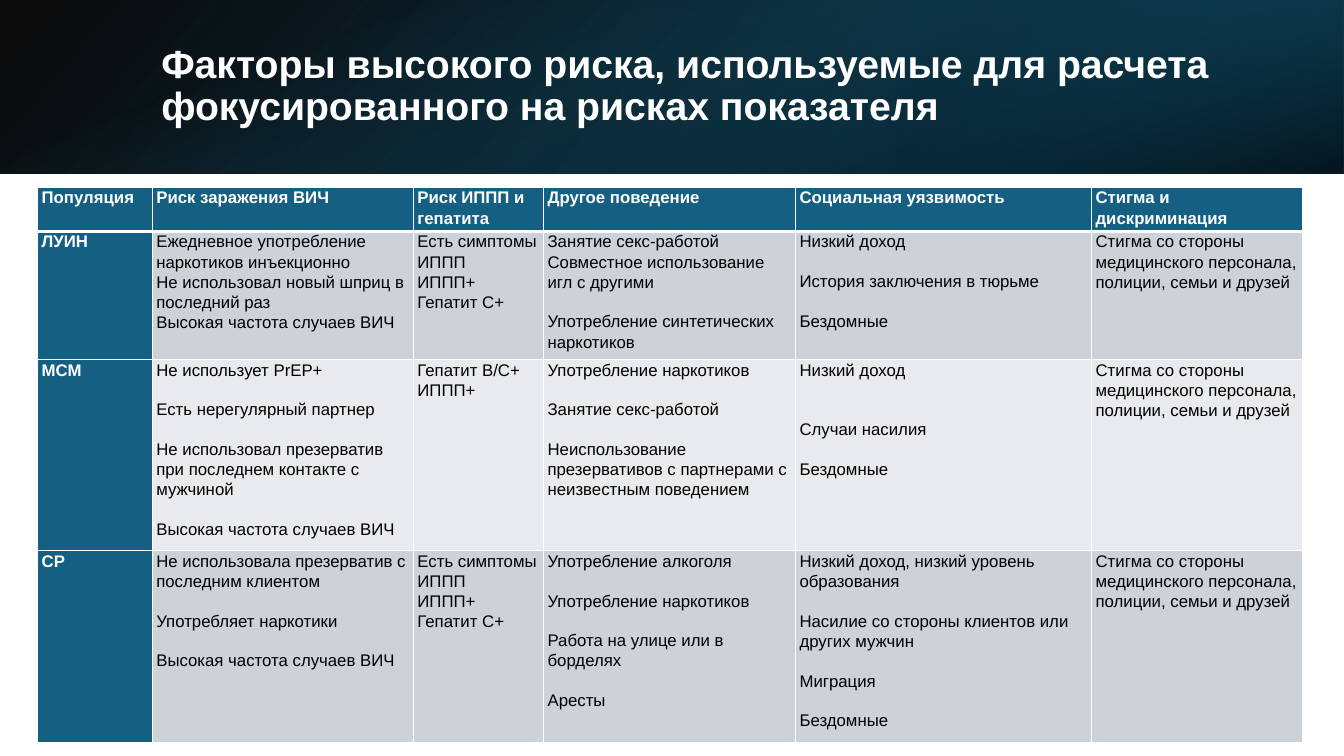
from lxml.etree import SubElement
from pptx import Presentation
from pptx.dml.color import RGBColor
from pptx.enum.shapes import MSO_SHAPE
from pptx.enum.text import MSO_ANCHOR, MSO_AUTO_SIZE, PP_ALIGN
from pptx.oxml.ns import qn
from pptx.util import Cm, Pt

WHITE = RGBColor(0xFF, 0xFF, 0xFF)
BLACK = RGBColor(0x00, 0x00, 0x00)
BLUE = RGBColor(0x15, 0x60, 0x82)
DEEP_BLUE = RGBColor(0x10, 0x48, 0x62)
NIGHT_BLUE = RGBColor(0x0B, 0x30, 0x41)
GREY = RGBColor(0xCC, 0xD2, 0xD8)
LIGHT_GREY = RGBColor(0xE8, 0xEA, 0xED)

SLIDE_WIDTH, SLIDE_HEIGHT = 33.87, 19.05
BAND_HEIGHT = 4.37
COLUMN_WIDTHS = (2.89, 6.58, 3.28, 6.35, 7.46, 5.32)
ROW_HEIGHTS = (1.11, 3.23, 4.82, 4.82)
BLANK_LINE = 14

STIGMA = "Стигма со стороны медицинского персонала, полиции, семьи и друзей"
INFECTIONS = "Есть симптомы ИППП\nИППП+\nГепатит C+"

# Each empty line in a cell becomes spacing above the next paragraph
RISK_FACTORS = (
    ("Популяция", "Риск заражения ВИЧ", "Риск ИППП и гепатита", "Другое поведение",
     "Социальная уязвимость", "Стигма и дискриминация"),
    ("ЛУИН",
     "Ежедневное употребление наркотиков инъекционно\n"
     "Не использовал новый шприц в последний раз\nВысокая частота случаев ВИЧ",
     INFECTIONS,
     "Занятие секс-работой\nСовместное использование игл с другими\n\n"
     "Употребление синтетических наркотиков",
     "Низкий доход\n\nИстория заключения в тюрьме\n\nБездомные",
     STIGMA),
    ("МСМ",
     "Не использует PrEP+\n\nЕсть нерегулярный партнер\n\n"
     "Не использовал презерватив при последнем контакте с мужчиной\n\n"
     "Высокая частота случаев ВИЧ",
     "Гепатит B/C+\nИППП+",
     "Употребление наркотиков\n\nЗанятие секс-работой\n\n"
     "Неиспользование презервативов с партнерами с неизвестным поведением",
     "Низкий доход\n\n\nСлучаи насилия\n\nБездомные",
     STIGMA),
    ("СР",
     "Не использовала презерватив с последним клиентом\n\n"
     "Употребляет наркотики\n\nВысокая частота случаев ВИЧ",
     INFECTIONS,
     "Употребление алкоголя\n\nУпотребление наркотиков\n\n"
     "Работа на улице или в борделях\n\nАресты",
     "Низкий доход, низкий уровень образования\n\n"
     "Насилие со стороны клиентов или других мужчин\n\nМиграция\n\nБездомные",
     STIGMA),
)


class SlideBuilder:
    font_name = "Arial"

    def __init__(self, slide):
        self.slide = slide

    def style(self, paragraph, size, color, bold, spacing):
        paragraph.line_spacing = spacing
        font = paragraph.font
        font.name, font.size, font.bold = self.font_name, Pt(size), bold
        font.color.rgb = color

    def gradient_band(self, left, top, width, height, stops, angle, rotation=0, flip=False):
        shape = self.slide.shapes.add_shape(
            MSO_SHAPE.RECTANGLE, Cm(left), Cm(top), Cm(width), Cm(height))
        shape.shadow.inherit = False
        shape.line.fill.background()
        shape.rotation = rotation
        properties = shape._element.spPr
        if flip:
            properties.find(qn("a:xfrm")).set("flipH", "1")
        # Transparent gradient stops
        shape.fill.gradient()
        gradient = properties.find(qn("a:gradFill"))
        for child in list(gradient):
            gradient.remove(child)
        stop_list = SubElement(gradient, qn("a:gsLst"))
        for position, color, opacity in stops:
            stop = SubElement(stop_list, qn("a:gs"), pos=str(position * 1000))
            tint = SubElement(stop, qn("a:srgbClr"), val=str(color))
            SubElement(tint, qn("a:alpha"), val=str(opacity * 1000))
        SubElement(gradient, qn("a:lin"), ang=str(angle * 60000), scaled="0")

    def title(self, text, left, top, width, height):
        title = self.slide.shapes.title
        title.left, title.top, title.width, title.height = map(Cm, (left, top, width, height))
        frame = title.text_frame
        frame.text = text
        frame.word_wrap = True
        frame.auto_size = MSO_AUTO_SIZE.NONE
        frame.vertical_anchor = MSO_ANCHOR.MIDDLE
        paragraph = frame.paragraphs[0]
        paragraph.alignment = PP_ALIGN.LEFT
        self.style(paragraph, 28, WHITE, True, 0.9)
        # Bring the title in front of the bands
        self.slide.shapes._spTree.append(title._element)

    def borders(self, cell, widths):
        properties = cell._tc.get_or_add_tcPr()
        for side, width in widths.items():
            line = SubElement(properties, qn(f"a:ln{side}"), w=str(Pt(width)))
            fill = SubElement(line, qn("a:solidFill"))
            SubElement(fill, qn("a:srgbClr"), val=str(WHITE))

    def cell(self, cell, text, fill, color, bold):
        cell.margin_left = cell.margin_right = Cm(0.1)
        cell.margin_top = cell.margin_bottom = 0
        cell.fill.solid()
        cell.fill.fore_color.rgb = fill
        frame = cell.text_frame
        gap = 0
        for number, line in enumerate(text.split("\n")):
            if not line:
                gap += BLANK_LINE
                continue
            paragraph = frame.add_paragraph() if number else frame.paragraphs[0]
            paragraph.text = line
            paragraph.space_before = Pt(gap)
            self.style(paragraph, 12, color, bold, 1.07)
            gap = 0

    def table(self, rows, left, top, column_widths, row_heights):
        table = self.slide.shapes.add_table(
            len(rows), len(column_widths), Cm(left), Cm(top),
            Cm(sum(column_widths)), Cm(sum(row_heights))).table
        table.horz_banding = False
        for column, width in zip(table.columns, column_widths):
            column.width = Cm(width)
        for row, height in zip(table.rows, row_heights):
            row.height = Cm(height)
        for row_number, texts in enumerate(rows):
            for column_number, text in enumerate(texts):
                cell = table.cell(row_number, column_number)
                heading = row_number == 0 or column_number == 0
                band = GREY if row_number % 2 else LIGHT_GREY
                self.borders(cell, {"L": 1, "R": 1, "T": 3 if row_number == 1 else 1,
                                    "B": 3 if row_number == 0 else 1})
                self.cell(cell, text, BLUE if heading else band,
                          WHITE if heading else BLACK, heading)


def main():
    presentation = Presentation()
    presentation.slide_width = Cm(SLIDE_WIDTH)
    presentation.slide_height = Cm(SLIDE_HEIGHT)
    builder = SlideBuilder(presentation.slides.add_slide(presentation.slide_layouts[5]))

    # Header band
    builder.gradient_band(0, 0, SLIDE_WIDTH, BAND_HEIGHT,
                          ((0, BLACK, 96), (100, DEEP_BLUE, 100)), 140, flip=True)
    third = SLIDE_WIDTH / 3
    builder.gradient_band(2 * third, 0, third, BAND_HEIGHT,
                          ((19, NIGHT_BLUE, 68), (100, BLUE, 79)), 320, 180, flip=True)
    offset = (SLIDE_WIDTH - BAND_HEIGHT) / 2
    builder.gradient_band(offset, -offset, BAND_HEIGHT, SLIDE_WIDTH,
                          ((23, BLUE, 0), (99, BLACK, 74)), 340, 90)

    # Title
    builder.title("Факторы высокого риска, используемые для расчета "
                  "фокусированного на рисках показателя", 3.81, 0.97, 27.89, 2.44)

    # Risk factor table
    builder.table(RISK_FACTORS, 0.95, 4.72, COLUMN_WIDTHS, ROW_HEIGHTS)

    presentation.save("out.pptx")


if __name__ == "__main__":
    main()
